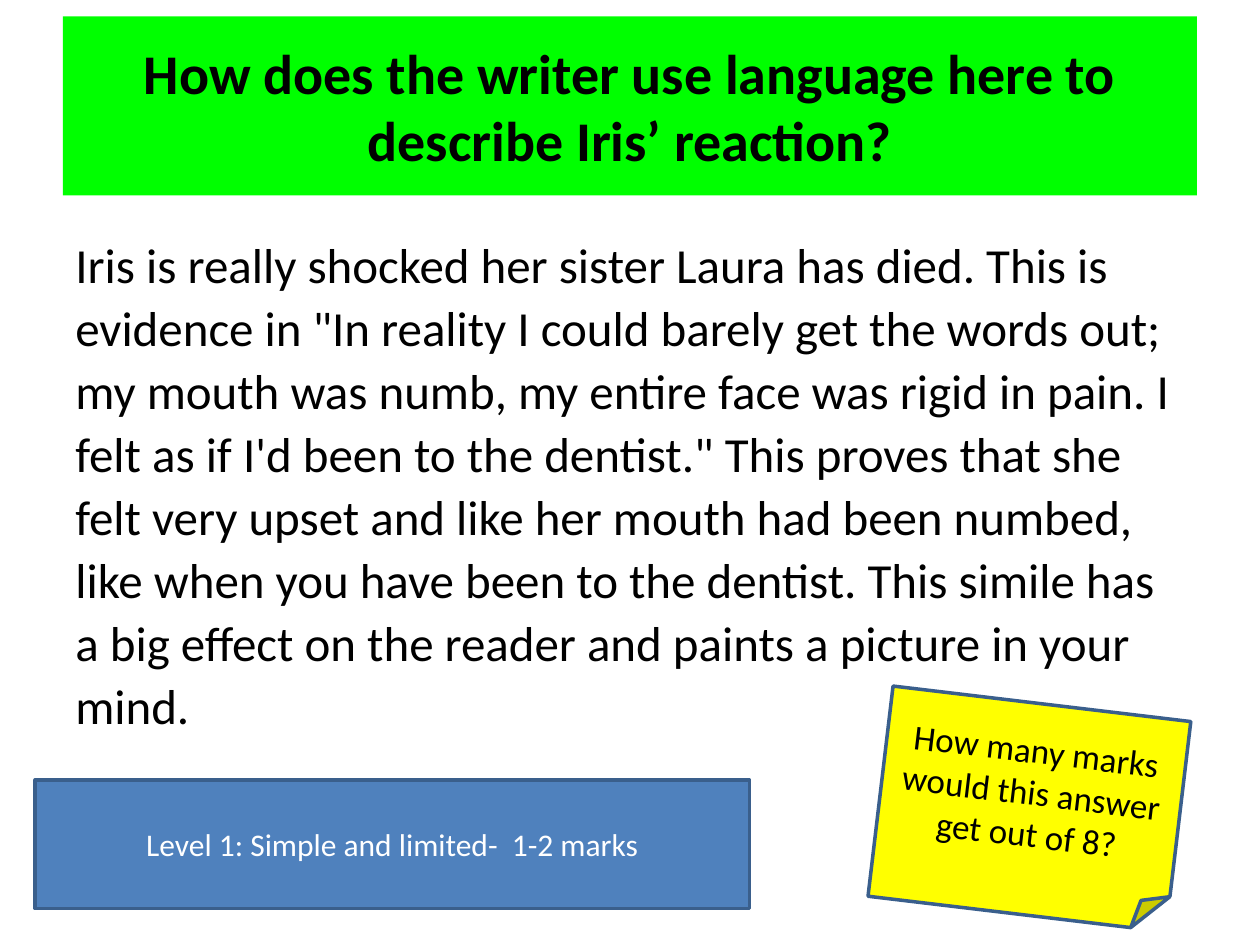
from pptx import Presentation
from pptx.dml.color import RGBColor
from pptx.enum import shapes, text
from pptx.util import Inches, Pt

GREEN = RGBColor(0x00, 0xFF, 0x00)
YELLOW = RGBColor(0xFF, 0xFF, 0x00)
BLUE = RGBColor(0x4F, 0x81, 0xBD)
DARK_BLUE = RGBColor(0x3A, 0x5F, 0x8C)
BLACK = RGBColor(0x00, 0x00, 0x00)
WHITE = RGBColor(0xFF, 0xFF, 0xFF)

QUESTION = "How does the writer use language here to describe Iris’ reaction?"
ANSWER = (
    "Iris is really shocked her sister Laura has died. This is evidence in "
    "\"In reality I could barely get the words out; my mouth was numb, my entire "
    "face was rigid in pain. I felt as if I'd been to the dentist.\" This proves "
    "that she felt very upset and like her mouth had been numbed, like when you "
    "have been to the dentist. This simile has a big effect on the reader and "
    "paints a picture in your mind."
)


def write(shape, wording, size, color=BLACK, bold=False):
    """Fill the shape with one wrapped paragraph and return it."""
    shape.text_frame.word_wrap = True
    para = shape.text_frame.paragraphs[0]
    para.text = wording
    para.font.name = "Calibri"
    para.font.size = Pt(size)
    para.font.bold = bold
    para.font.color.rgb = color
    return para


def add_panel(page, box, wording, size, fill, color=BLACK, bold=False,
              outline=None, kind=shapes.MSO_SHAPE.RECTANGLE):
    """Add a filled shape with centred text; no outline colour means no line."""
    panel = page.shapes.add_shape(kind, *map(Inches, box))
    panel.shadow.inherit = False
    panel.fill.solid()
    panel.fill.fore_color.rgb = fill
    if outline is None:
        panel.line.fill.background()
    else:
        panel.line.color.rgb = outline
        panel.line.width = Pt(2)
    panel.text_frame.vertical_anchor = text.MSO_ANCHOR.MIDDLE
    write(panel, wording, size, color, bold).alignment = text.PP_ALIGN.CENTER
    return panel


def add_answer(page, box):
    answer = page.shapes.add_textbox(*map(Inches, box))
    para = write(answer, ANSWER, 28)
    para.line_spacing = 1.07
    para.space_after = Pt(8)
    answer.text_frame.auto_size = text.MSO_AUTO_SIZE.SHAPE_TO_FIT_TEXT


def add_sticky_note(page, box):
    note = add_panel(page, box, "How many marks would this answer get out of 8?",
                     20, YELLOW, outline=DARK_BLUE,
                     kind=shapes.MSO_SHAPE.FOLDED_CORNER)
    note.rotation = 6.8


def main():
    deck = Presentation()
    deck.slide_width, deck.slide_height = Inches(10), Inches(7.5)
    page = deck.slides.add_slide(deck.slide_layouts[6])
    add_panel(page, (0.5, 0.13, 9, 1.42), QUESTION, 32, GREEN, bold=True)
    add_answer(page, (0.5, 1.78, 9, 4.11))
    add_sticky_note(page, (6.98, 5.58, 2.38, 1.68))
    add_panel(page, (0.28, 6.19, 5.67, 1.02),
              "Level 1: Simple and limited-  1-2 marks", 18, BLUE, WHITE,
              outline=DARK_BLUE)
    deck.save("out.pptx")


if __name__ == "__main__":
    main()
